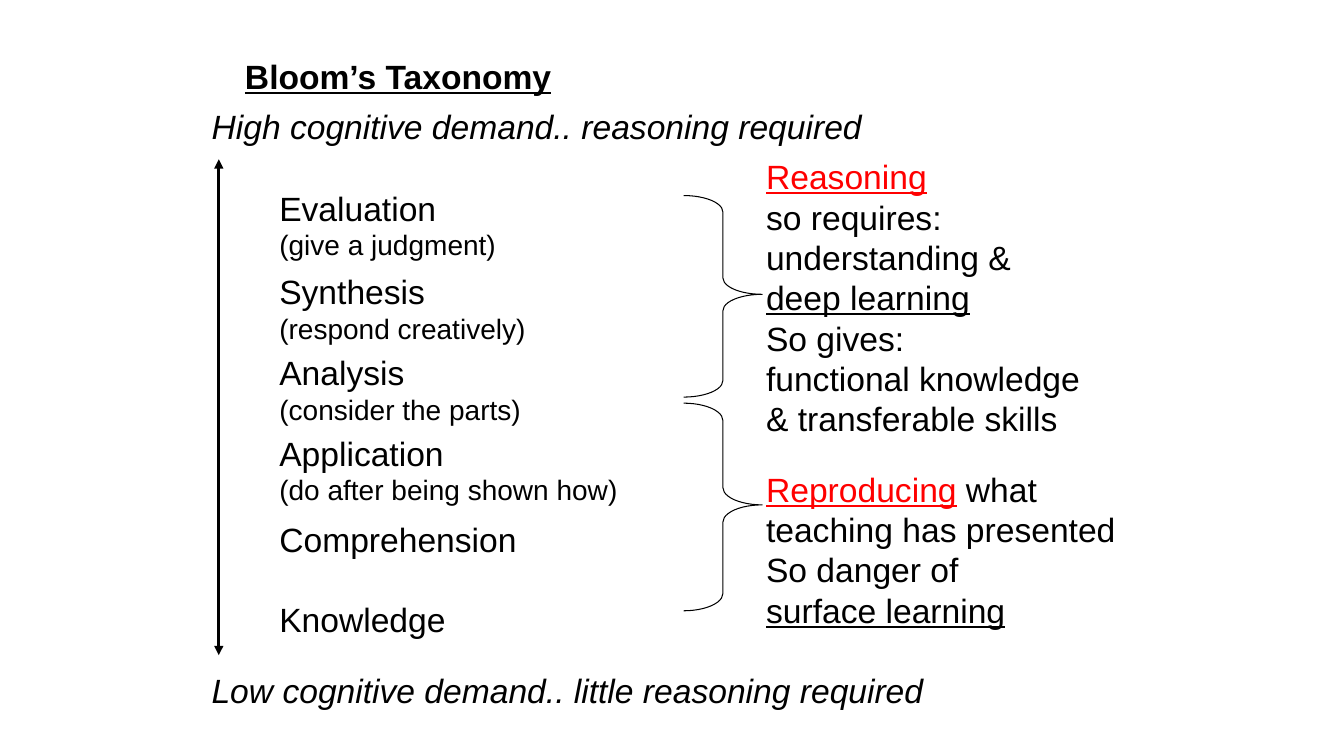
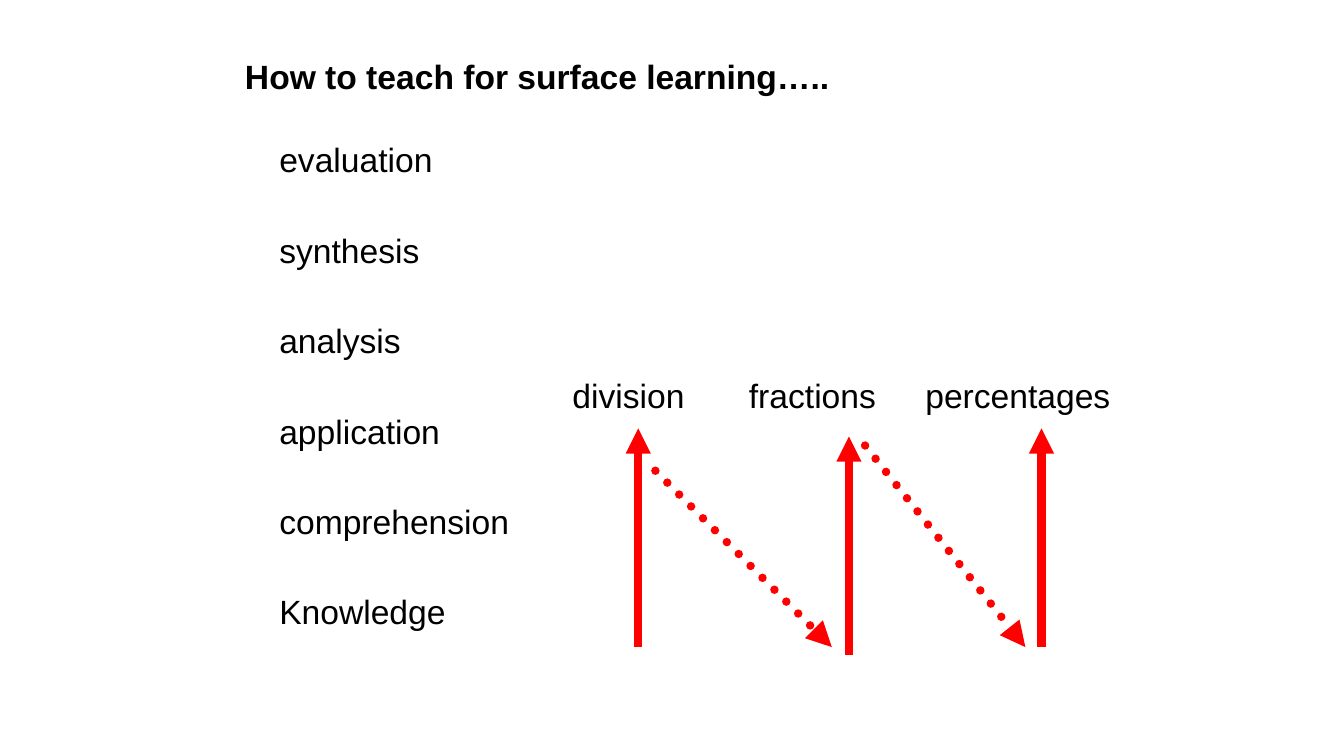
from dataclasses import dataclass
from typing import Optional

from lxml import etree
from pptx import Presentation
from pptx.dml.color import RGBColor
from pptx.enum.dml import MSO_LINE
from pptx.enum.shapes import MSO_CONNECTOR, MSO_SHAPE
from pptx.enum.text import MSO_ANCHOR, MSO_AUTO_SIZE, PP_ALIGN
from pptx.oxml.ns import qn
from pptx.presentation import Presentation as Deck
from pptx.shapes.base import BaseShape
from pptx.slide import Slide
from pptx.text.text import TextFrame
from pptx.util import Inches, Pt

STRAIGHT = MSO_CONNECTOR.STRAIGHT
RIGHT_BRACE = MSO_SHAPE.RIGHT_BRACE
DOTTED = MSO_LINE.ROUND_DOT
LEFT = PP_ALIGN.LEFT
TOP = MSO_ANCHOR.TOP
FIXED_SIZE = MSO_AUTO_SIZE.NONE

COLORS = {"text": "000000", "accent": "FF0000"}
FONT = "Arial"
TEXT_SIZE = 24
DETAIL_SIZE = 20
LINE_HEIGHT = 1.15  # line height of the font, as a multiple of its size
TITLE_AND_CONTENT = 1
LADDER_LEFT = 2.67


@dataclass(frozen=True)
class Span:
    text: str
    color: str = "text"
    size: int = TEXT_SIZE
    bold: bool = False
    italic: bool = False
    underline: bool = False


@dataclass(frozen=True)
class Note:
    left: float
    top: float
    width: float
    height: float
    lines: tuple[tuple[Span, ...], ...]


@dataclass(frozen=True)
class Rung:
    """One taxonomy level; top is where its text box would begin."""
    name: str
    top: float
    detail: str = ""


@dataclass(frozen=True)
class Brace:
    top: float
    height: float
    curve: float


@dataclass(frozen=True)
class Arrow:
    start: tuple[float, float]
    end: tuple[float, float]
    color: str = "accent"
    weight: float = 6
    dotted: bool = False
    double: bool = False


BLOOM_RUNGS = (
    Rung("Evaluation", 1.81, "(give a judgment)"),
    Rung("Synthesis", 2.61, "(respond creatively)"),
    Rung("Analysis", 3.38, "(consider the parts)"),
    Rung("Application", 4.15, "(do after being shown how)"),
    Rung("Comprehension", 4.98),
    Rung("Knowledge", 5.75),
)
SURFACE_NAMES = ("evaluation", "synthesis", "analysis",
                 "application", "comprehension", "Knowledge")
SURFACE_TOP, SURFACE_PITCH = 1.33, 0.88

DEMAND_NOTES = tuple(
    Note(2, top, 8.58, 0.5, ((Span(text, italic=True),),))
    for text, top in (
        ("High cognitive demand.. reasoning required", 1),
        ("Low cognitive demand.. little reasoning required", 6.6),
    )
)
LEARNING_NOTES = (
    Note(7.5, 1.5, 4, 2.93, (
        (Span("Reasoning", color="accent", underline=True),),
        (Span("so requires:"),),
        (Span("understanding &"),),
        (Span("deep learning", underline=True),),
        (Span("So gives:"),),
        (Span("functional knowledge"),),
        (Span("& transferable skills"),),
    )),
    Note(7.5, 4.6, 4, 1.7, (
        (Span("Reproducing", color="accent", underline=True),
         Span(" what")),
        (Span("teaching has presented"),),
        (Span("So danger of"),),
        (Span("surface learning", underline=True),),
    )),
)
BRACES = (Brace(1.94, 2, 0.21), Brace(4, 2.06, 0.22))
DEMAND_ARROW = Arrow((2.17, 1.58), (2.17, 6.5), color="text",
                     weight=2.25, double=True)

TOPIC_NOTES = tuple(
    Note(5.58 + 1.75 * index, 3.67, 2.3, 0.51, ((Span(topic),),))
    for index, topic in enumerate(("division", "fractions", "percentages"))
)
TOPIC_ARROWS = (
    Arrow((6.33, 6.42), (6.33, 4.25)),
    Arrow((8.42, 6.5), (8.42, 4.33)),
    Arrow((10.33, 6.42), (10.33, 4.25)),
    Arrow((6.5, 4.67), (8.25, 6.42), dotted=True),
    Arrow((8.58, 4.42), (10.17, 6.42), dotted=True),
)


def rgb(name: str) -> RGBColor:
    return RGBColor.from_string(COLORS[name])


def place(shape: BaseShape, left: float, top: float,
          width: float, height: float) -> None:
    shape.left, shape.top = Inches(left), Inches(top)
    shape.width, shape.height = Inches(width), Inches(height)


def write_lines(frame: TextFrame, lines: tuple[tuple[Span, ...], ...], *,
                gaps: Optional[list[float]] = None) -> None:
    """Fill a frame with one paragraph per line; gaps are points before each."""
    frame.word_wrap = True
    frame.auto_size = FIXED_SIZE
    frame.vertical_anchor = TOP
    for index, line in enumerate(lines):
        para = frame.paragraphs[0] if index == 0 else frame.add_paragraph()
        para.alignment = LEFT
        para.line_spacing = 1.0
        para.space_before = Pt(gaps[index] if gaps else 0)
        para.space_after = Pt(0)
        for span in line:
            run = para.add_run()
            run.text = span.text
            font = run.font
            font.name, font.size = FONT, Pt(span.size)
            font.bold, font.italic = span.bold, span.italic
            font.underline = span.underline
            font.color.rgb = rgb(span.color)


def add_note(page: Slide, note: Note) -> None:
    box = page.shapes.add_textbox(Inches(note.left), Inches(note.top),
                                  Inches(note.width), Inches(note.height))
    write_lines(box.text_frame, note.lines)


def add_titled_page(deck: Deck, title: str, *,
                    underline: bool = False) -> Slide:
    page = deck.slides.add_slide(deck.slide_layouts[TITLE_AND_CONTENT])
    place(page.shapes.title, 2.33, 0.5, 8, 0.5)
    heading = Span(title, bold=True, underline=underline)
    write_lines(page.shapes.title.text_frame, ((heading,),))
    return page


def fill_ladder(page: Slide, rungs: tuple[Rung, ...]) -> None:
    """List the rungs in the body, spaced so that each starts at its top."""
    body = page.placeholders[1]
    place(body, LADDER_LEFT, rungs[0].top, 3.9,
          rungs[-1].top - rungs[0].top + 0.51)
    lines: list[tuple[Span, ...]] = []
    gaps: list[float] = []
    bottom = rungs[0].top * 72
    for rung in rungs:
        gaps.append(round(rung.top * 72 - bottom, 1))
        lines.append((Span(rung.name),))
        bottom = rung.top * 72 + TEXT_SIZE * LINE_HEIGHT
        if rung.detail:
            gaps.append(0)
            lines.append((Span(rung.detail, size=DETAIL_SIZE),))
            bottom += DETAIL_SIZE * LINE_HEIGHT
    write_lines(body.text_frame, tuple(lines), gaps=gaps)
    for para in body.text_frame.paragraphs:
        properties = para._p.get_or_add_pPr()
        properties.set("marL", "0")
        properties.set("indent", "0")
        etree.SubElement(properties, qn("a:buNone"))


def add_brace(page: Slide, brace: Brace) -> None:
    shape = page.shapes.add_shape(RIGHT_BRACE, Inches(6.78), Inches(brace.top),
                                  Inches(0.78), Inches(brace.height))
    shape.adjustments[0] = brace.curve
    shape.adjustments[1] = 0.49
    shape.shadow.inherit = False
    shape.fill.background()
    shape.line.color.rgb = rgb("text")
    shape.line.width = Pt(0.75)


def add_arrow(page: Slide, arrow: Arrow) -> None:
    points = [Inches(value) for value in arrow.start + arrow.end]
    connector = page.shapes.add_connector(STRAIGHT, *points)
    connector.line.color.rgb = rgb(arrow.color)
    connector.line.width = Pt(arrow.weight)
    if arrow.dotted:
        connector.line.dash_style = DOTTED
    properties = connector._element.spPr
    outline = properties.find(qn("a:ln"))
    if arrow.dotted:
        outline.set("cap", "rnd")
    for end in ("a:headEnd", "a:tailEnd") if arrow.double else ("a:tailEnd",):
        etree.SubElement(outline, qn(end), type="triangle")
    etree.SubElement(properties, qn("a:effectLst"))


def build_taxonomy(deck: Deck) -> None:
    page = add_titled_page(deck, "Bloom’s Taxonomy", underline=True)
    fill_ladder(page, BLOOM_RUNGS)
    add_arrow(page, DEMAND_ARROW)
    for brace in BRACES:
        add_brace(page, brace)
    for note in DEMAND_NOTES + LEARNING_NOTES:
        add_note(page, note)


def build_surface_learning(deck: Deck) -> None:
    page = add_titled_page(deck, "How to teach for surface learning…..")
    fill_ladder(page, tuple(
        Rung(name, SURFACE_TOP + SURFACE_PITCH * index)
        for index, name in enumerate(SURFACE_NAMES)))
    for note in TOPIC_NOTES:
        add_note(page, note)
    for arrow in TOPIC_ARROWS:
        add_arrow(page, arrow)


def main() -> None:
    deck = Presentation()
    deck.slide_width, deck.slide_height = Inches(13.33), Inches(7.5)
    build_taxonomy(deck)
    build_surface_learning(deck)
    deck.save("out.pptx")


if __name__ == "__main__":
    main()
